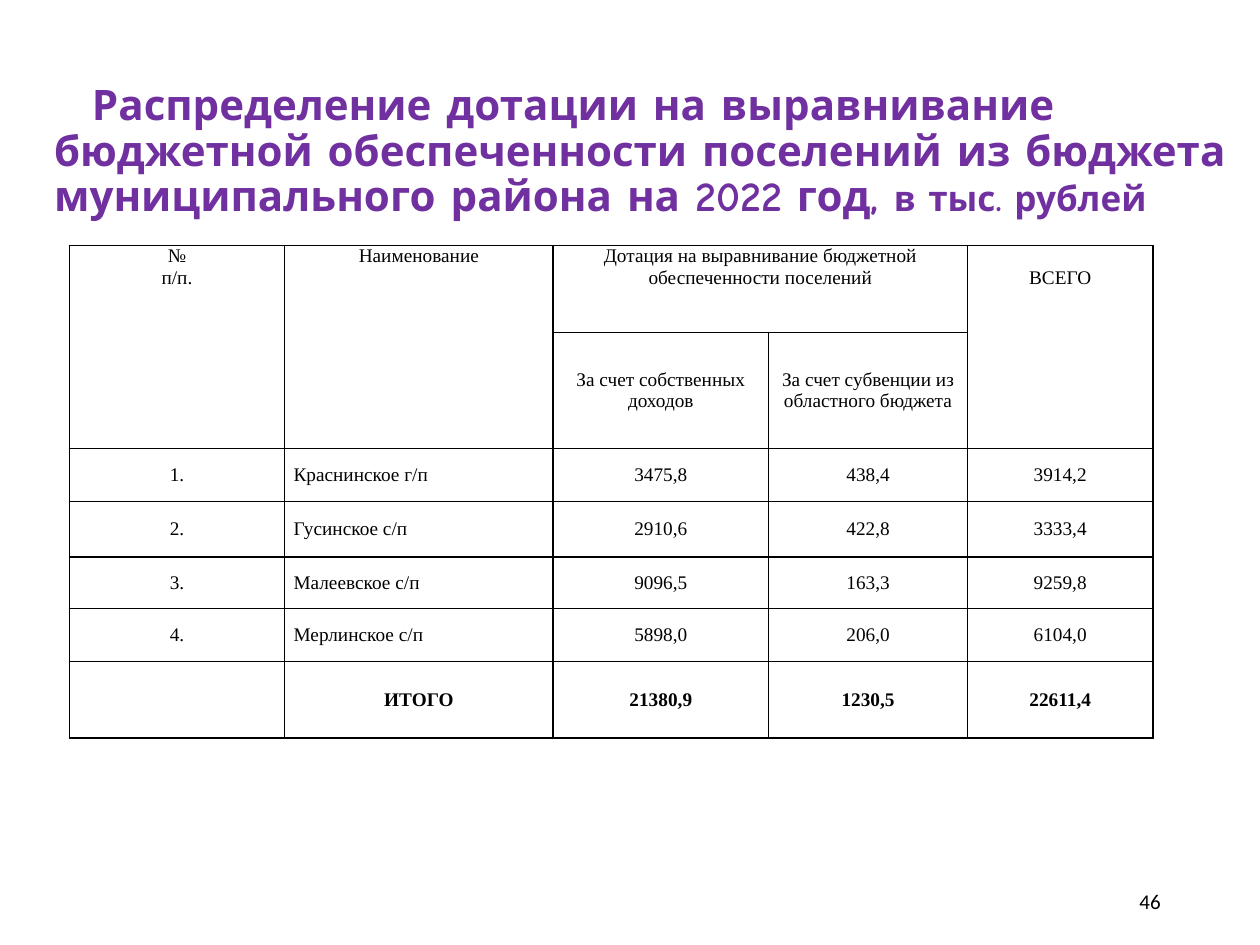
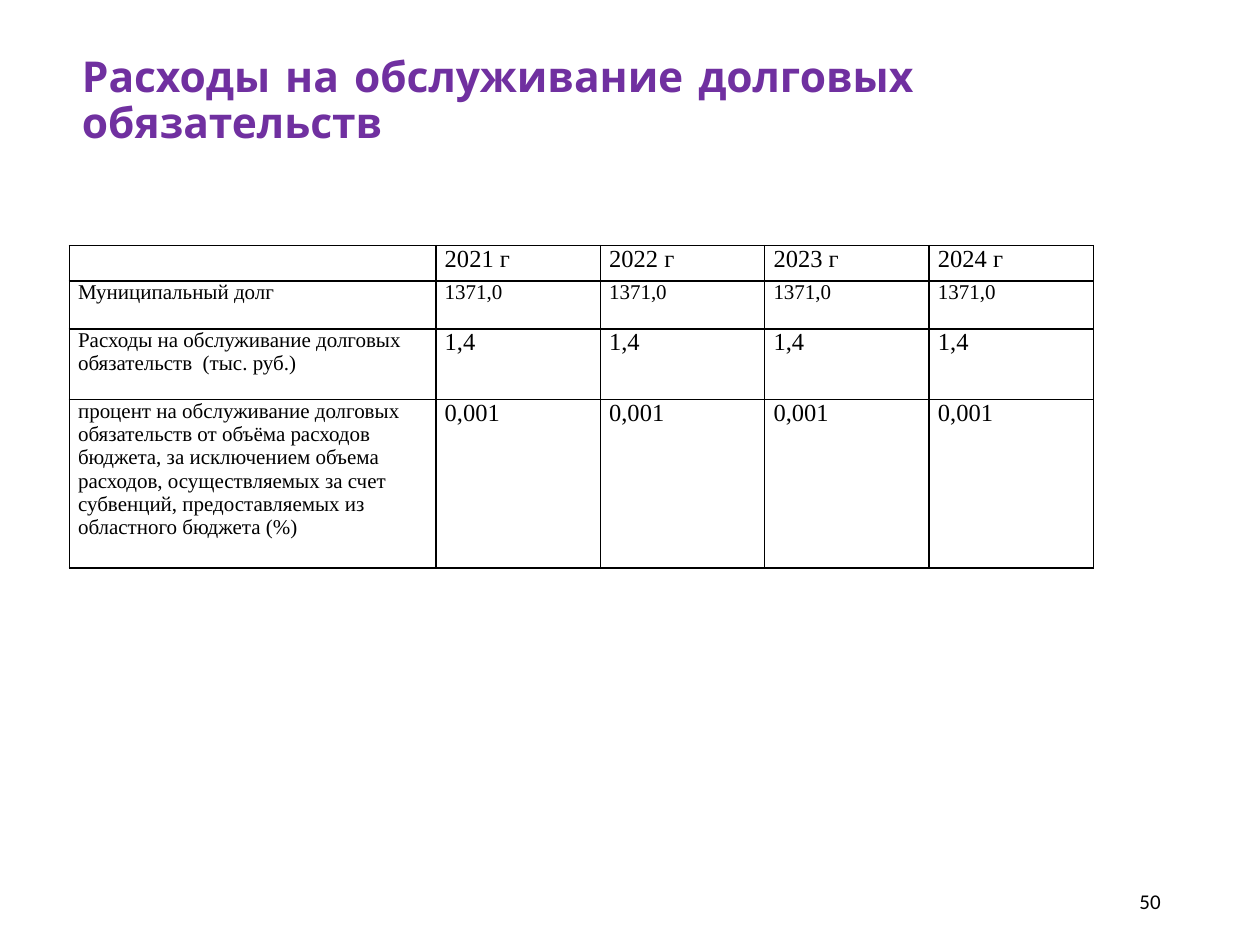
from collections import namedtuple

from lxml.etree import SubElement
from pptx import Presentation
from pptx.dml.color import RGBColor
from pptx.enum.text import MSO_ANCHOR, MSO_AUTO_SIZE, PP_ALIGN
from pptx.oxml.ns import qn
from pptx.util import Inches, Pt

PURPLE = RGBColor(0x70, 0x30, 0xA0)
BLACK = RGBColor(0, 0, 0)
TITLE_FONT, TABLE_FONT, NUMBER_FONT = "Comic Neue", "Times New Roman", "Calibri"

SLIDE_WIDTH, SLIDE_HEIGHT = Inches(10), Inches(7.5)
GRID_COLUMNS, GRID_ROWS = 100, 75
TITLE_ONLY = 5

Box = namedtuple("Box", "left top width height")
Style = namedtuple("Style", "font size color bold", defaults=(BLACK, False))

NUMBER_BOX = Box(70.6, 69.5, 22.5, 4)
NUMBER_STYLE = Style(NUMBER_FONT, 12)

GRANT_HEADS = [
    (0, 0, 1, 0, ["№", "п/п."]),
    (0, 1, 1, 1, ["Наименование"]),
    (0, 2, 0, 3, ["Дотация на выравнивание бюджетной обеспеченности поселений"]),
    (0, 4, 1, 4, ["ВСЕГО"]),
    (1, 2, 1, 2, ["За счет собственных доходов"]),
    (1, 3, 1, 3, ["За счет субвенции из областного бюджета"]),
]
GRANTS = [
    ("1.", "Краснинское г/п", "3475,8", "438,4", "3914,2"),
    ("2.", "Гусинское с/п", "2910,6", "422,8", "3333,4"),
    ("3.", "Малеевское с/п", "9096,5", "163,3", "9259,8"),
    ("4.", "Мерлинское с/п", "5898,0", "206,0", "6104,0"),
    ("", "ИТОГО", "21380,9", "1230,5", "22611,4"),
]
DEBT_YEARS = ["2021 г", "2022 г", "2023 г", "2024 г"]
DEBT_COSTS = [
    ("Муниципальный долг", "1371,0", 12),
    ("Расходы на обслуживание долговых обязательств  (тыс. руб.)", "1,4", 14),
    ("процент на обслуживание долговых обязательств от объёма расходов бюджета, "
     "за исключением объема расходов, осуществляемых за счет субвенций, "
     "предоставляемых из областного бюджета (%)", "0,001", 14),
]


def on_slide(box):
    """Turn grid units into slide lengths."""
    column, row = SLIDE_WIDTH / GRID_COLUMNS, SLIDE_HEIGHT / GRID_ROWS
    return [int(value * unit) for value, unit in zip(box, (column, row) * 2)]


def add_run(paragraph, text, style):
    run = paragraph.add_run()
    run.text = text
    run.font.name = style.font
    run.font.size = Pt(style.size)
    run.font.bold = style.bold
    run.font.color.rgb = style.color


def format_title(slide, box, pieces, indent=0):
    """Place the title and fill it with (text, style) pieces."""
    title = slide.shapes.title
    title.left, title.top, title.width, title.height = on_slide(box)
    frame = title.text_frame
    frame.word_wrap = True
    frame.auto_size = MSO_AUTO_SIZE.NONE
    frame.vertical_anchor = MSO_ANCHOR.MIDDLE
    heading = frame.paragraphs[0]
    heading.alignment = PP_ALIGN.LEFT
    heading.line_spacing = 0.9
    heading._p.get_or_add_pPr().set("indent", str(Inches(indent)))
    for text, style in pieces:
        add_run(heading, text, style)


def add_page_number(slide, number):
    frame = slide.shapes.add_textbox(*on_slide(NUMBER_BOX)).text_frame
    frame.word_wrap = True
    frame.vertical_anchor = MSO_ANCHOR.MIDDLE
    frame.paragraphs[0].alignment = PP_ALIGN.RIGHT
    add_run(frame.paragraphs[0], number, NUMBER_STYLE)


def rule_cell(cell):
    """Give the cell thin black borders and no fill."""
    properties = cell._tc.get_or_add_tcPr()
    for side in ("a:lnL", "a:lnR", "a:lnT", "a:lnB"):
        line = SubElement(properties, qn(side), w=str(Pt(1)))
        SubElement(SubElement(line, qn("a:solidFill")), qn("a:srgbClr"), val=str(BLACK))
    cell.fill.background()


def add_ruled_table(slide, box, column_shares, row_shares):
    """Add a table whose columns and rows divide the box by their shares."""
    left, top, width, height = on_slide(box)
    table = slide.shapes.add_table(
        len(row_shares), len(column_shares), left, top, width, height).table
    table.first_row = table.horz_banding = False
    for column, share in zip(table.columns, column_shares):
        column.width = int(width * share / sum(column_shares))
    for row, share in zip(table.rows, row_shares):
        row.height = int(height * share / sum(row_shares))
    for cell in table.iter_cells():
        cell.margin_left = cell.margin_right = Inches(0.07)
        cell.margin_top = cell.margin_bottom = 0
        rule_cell(cell)
    return table


def fill_cell(cell, lines, style, align=PP_ALIGN.CENTER, anchor=MSO_ANCHOR.MIDDLE):
    cell.vertical_anchor = anchor
    frame = cell.text_frame
    for index, text in enumerate(lines):
        paragraph = frame.add_paragraph() if index else frame.paragraphs[0]
        paragraph.alignment = align
        if text:
            add_run(paragraph, text, style)
        else:
            SubElement(paragraph._p, qn("a:endParaRPr"), sz=str(style.size * 100))


def add_grant_table(slide, box):
    table = add_ruled_table(slide, box, [17.1, 21.3, 17.1, 15.8, 14.7],
                            [6.9, 9.2, 4.2, 4.4, 4.1, 4.2, 6.1])
    plain = Style(TABLE_FONT, 11)
    for top, left, bottom, right, lines in GRANT_HEADS:
        head = table.cell(top, left)
        if (top, left) != (bottom, right):
            head.merge(table.cell(bottom, right))
        fill_cell(head, lines, plain,
                  anchor=MSO_ANCHOR.MIDDLE if top else MSO_ANCHOR.TOP)
    table.cell(0, 4).margin_top = Inches(0.17)
    for row, grant in enumerate(GRANTS, start=2):
        is_total = not grant[0]
        for column, text in enumerate(grant):
            is_name = column == 1 and not is_total
            fill_cell(table.cell(row, column), [text], plain._replace(bold=is_total),
                      PP_ALIGN.LEFT if is_name else PP_ALIGN.CENTER)


def add_debt_table(slide, box):
    years = len(DEBT_YEARS)
    table = add_ruled_table(slide, box, [29.1] + [13.05] * years, [2.8, 3.8, 5.6, 13.4])
    rows = [("", DEBT_YEARS, 14)]
    rows += [(label, [value] * years, size) for label, value, size in DEBT_COSTS]
    for row, (label, values, size) in enumerate(rows):
        for column, text in enumerate([label, *values]):
            style = Style(TABLE_FONT, size if column else 12)
            fill_cell(table.cell(row, column), [text], style, PP_ALIGN.LEFT, MSO_ANCHOR.TOP)


def add_grant_slide(deck):
    slide = deck.slides.add_slide(deck.slide_layouts[TITLE_ONLY])
    heading = Style(TITLE_FONT, 24, PURPLE, True)
    format_title(slide, Box(3.3, 3.9, 95, 16.4), [
        ("Распределение дотации на выравнивание бюджетной обеспеченности поселений "
         "из бюджета муниципального района на 2022 год, ", heading),
        ("в тыс. рублей", heading._replace(size=20)),
    ], indent=0.3)
    add_grant_table(slide, Box(5.5, 19.5, 86, 39.1))
    add_page_number(slide, "46")


def add_debt_slide(deck):
    slide = deck.slides.add_slide(deck.slide_layouts[TITLE_ONLY])
    format_title(slide, Box(5.5, 3.5, 81.3, 9.2), [
        ("Расходы на обслуживание долговых обязательств",
         Style(TITLE_FONT, 24.3, PURPLE, True)),
    ])
    add_debt_table(slide, Box(5.5, 19.5, 81.3, 25.6))
    add_page_number(slide, "50")


def main():
    deck = Presentation()
    deck.slide_width, deck.slide_height = SLIDE_WIDTH, SLIDE_HEIGHT
    add_grant_slide(deck)
    add_debt_slide(deck)
    deck.save("out.pptx")


if __name__ == "__main__":
    main()
